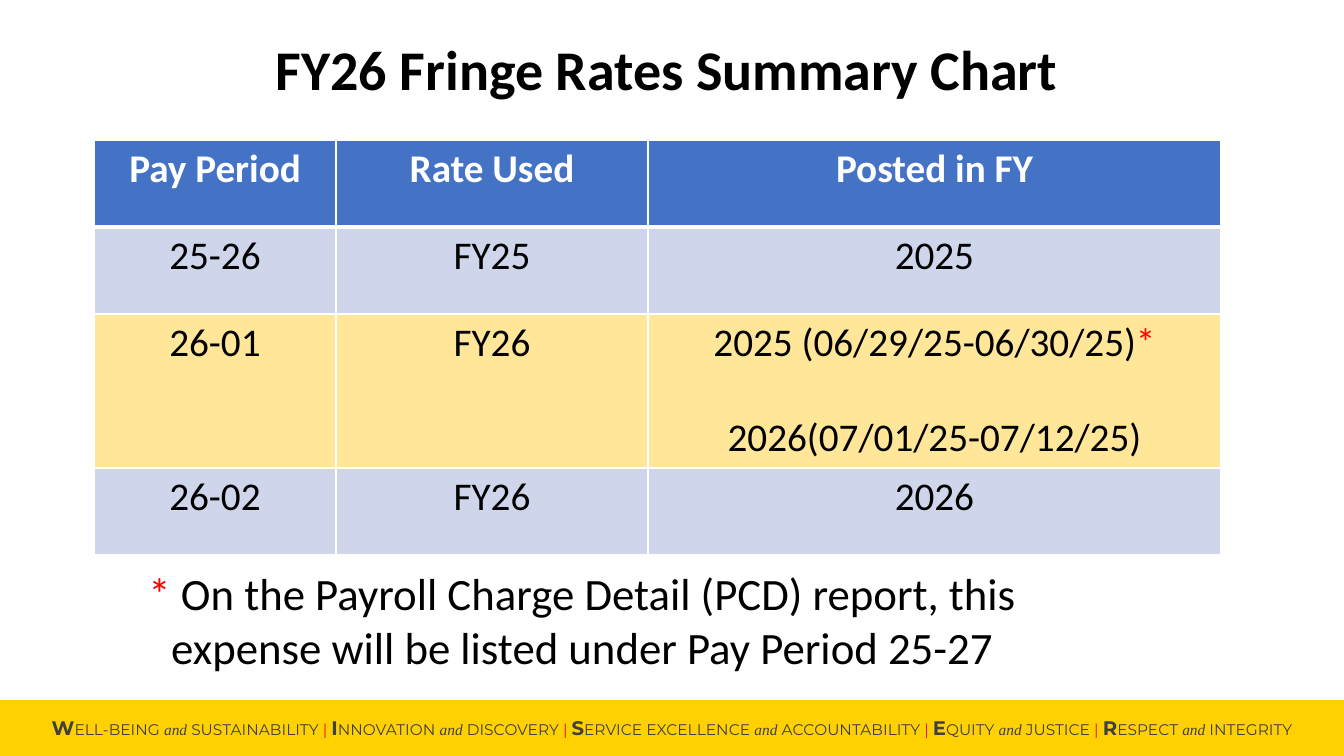
import pptx
import pptx.dml.color
import pptx.enum.shapes
import pptx.enum.text
import pptx.oxml
import pptx.oxml.ns
import pptx.util

RGBColor = pptx.dml.color.RGBColor
BLACK = RGBColor(0x00, 0x00, 0x00)
WHITE = RGBColor(0xFF, 0xFF, 0xFF)
RED = RGBColor(0xFF, 0x00, 0x00)
CRIMSON = RGBColor(0xE3, 0x19, 0x37)
CHARCOAL = RGBColor(0x40, 0x40, 0x42)
GOLD = RGBColor(0xFF, 0xD1, 0x02)
BLUE = RGBColor(0x44, 0x72, 0xC4)
LAVENDER = RGBColor(0xCF, 0xD5, 0xEA)
CREAM = RGBColor(0xFF, 0xE6, 0x99)

PAGE_WIDTH, PAGE_HEIGHT = 1344, 756
CENTER = pptx.enum.text.PP_ALIGN.CENTER

VALUES = [
    ("WELL-BEING", "SUSTAINABILITY"),
    ("INNOVATION", "DISCOVERY"),
    ("SERVICE EXCELLENCE", "ACCOUNTABILITY"),
    ("EQUITY", "JUSTICE"),
    ("RESPECT", "INTEGRITY"),
]
COLUMN_WIDTHS = [242, 312, 573]
RATE_ROWS = [
    (87, BLUE, ["Pay Period", "Rate Used", "Posted in FY"]),
    (87, LAVENDER, ["25-26", "FY25", "2025"]),
    (154, CREAM, ["26-01", "FY26", "2025 (06/29/25-06/30/25)*\n2026(07/01/25-07/12/25)"]),
    (87, LAVENDER, ["26-02", "FY26", "2026"]),
]


def px(length):
    return pptx.util.Emu(round(length * 914400 / 100.8))


class FringeRatesPage:
    """Holds the text style and the current slide, and draws its elements."""

    def __init__(self, deck, font="Calibri"):
        self.font = font
        self.page = deck.slides.add_slide(deck.slide_layouts[6])

    def span(self, para, text, size, color=BLACK, bold=False, italic=False, font=None):
        span = para.add_run()
        span.text = text
        span.font.name = font or self.font
        span.font.size = pptx.util.Pt(size)
        span.font.color.rgb = color
        span.font.bold = bold
        span.font.italic = italic

    def text_box(self, left, top, width, height):
        box = self.page.shapes.add_textbox(px(left), px(top), px(width), px(height))
        box.text_frame.word_wrap = True
        return box.text_frame.paragraphs[0]

    def title(self, text, *place):
        para = self.text_box(*place)
        para.line_spacing = 0.9
        self.span(para, text, 40, bold=True)

    def footnote(self, text, *place):
        para = self.text_box(*place)
        para.alignment = CENTER
        self.span(para, "* ", 32, RED)
        self.span(para, text, 32)

    def footer(self, top):
        band = self.page.shapes.add_shape(
            pptx.enum.shapes.MSO_SHAPE.RECTANGLE,
            0, px(top), px(PAGE_WIDTH), px(PAGE_HEIGHT - top))
        band.shadow.inherit = False
        band.fill.solid()
        band.fill.fore_color.rgb = GOLD
        band.line.fill.background()
        band.text_frame.vertical_anchor = pptx.enum.text.MSO_ANCHOR.MIDDLE
        para = band.text_frame.paragraphs[0]
        para.alignment = CENTER
        sans = "Montserrat"
        for index, (first, second) in enumerate(VALUES):
            if index:
                self.span(para, " | ", 11, CRIMSON, font=sans)
            self.span(para, first[0], 14, CHARCOAL, bold=True, font=sans)
            self.span(para, first[1:] + " ", 11, CHARCOAL, font=sans)
            self.span(para, "and", 11, CHARCOAL, italic=True, font="Times New Roman")
            self.span(para, " " + second, 11, CHARCOAL, font=sans)

    def borders(self, cell, widths):
        properties = cell._tc.get_or_add_tcPr()
        for side, points in zip("LRTB", widths):
            properties.append(pptx.oxml.parse_xml(
                f'<a:ln{side} {pptx.oxml.ns.nsdecls("a")} w="{pptx.util.Pt(points)}">'
                f'<a:solidFill><a:srgbClr val="{WHITE}"/></a:solidFill></a:ln{side}>'))

    def cell(self, cell, text, fill, header):
        cell.fill.solid()
        cell.fill.fore_color.rgb = fill
        for index, line in enumerate(text.split("\n")):
            para = cell.text_frame.add_paragraph() if index else cell.text_frame.paragraphs[0]
            para.alignment = CENTER
            if index:
                para.space_before = pptx.util.Pt(34)
            self.span(para, line.rstrip("*"), 28, WHITE if header else BLACK, bold=header)
            if line.endswith("*"):
                self.span(para, "*", 28, RED)

    def rate_table(self, left, top):
        height = sum(row[0] for row in RATE_ROWS)
        table = self.page.shapes.add_table(
            len(RATE_ROWS), len(COLUMN_WIDTHS), px(left), px(top),
            px(sum(COLUMN_WIDTHS)), px(height)).table
        for column, width in zip(table.columns, COLUMN_WIDTHS):
            column.width = px(width)
        for row, (row_height, fill, texts) in enumerate(RATE_ROWS):
            table.rows[row].height = px(row_height)
            for column, text in enumerate(texts):
                cell = table.cell(row, column)
                self.borders(cell, (1, 1, 3 if row == 1 else 1, 3 if row == 0 else 1))
                self.cell(cell, text, fill, header=row == 0)


def main():
    deck = pptx.Presentation()
    deck.slide_width, deck.slide_height = px(PAGE_WIDTH), px(PAGE_HEIGHT)
    page = FringeRatesPage(deck)
    page.footer(700)
    page.title("FY26 Fringe Rates Summary Chart", 266, 37, 967, 95)
    page.rate_table(94, 140)
    page.footnote(
        "On the Payroll Charge Detail (PCD) report, this expense will be listed "
        "under Pay Period 25-27", 78, 561, 1009, 119)
    deck.save("out.pptx")


if __name__ == "__main__":
    main()
